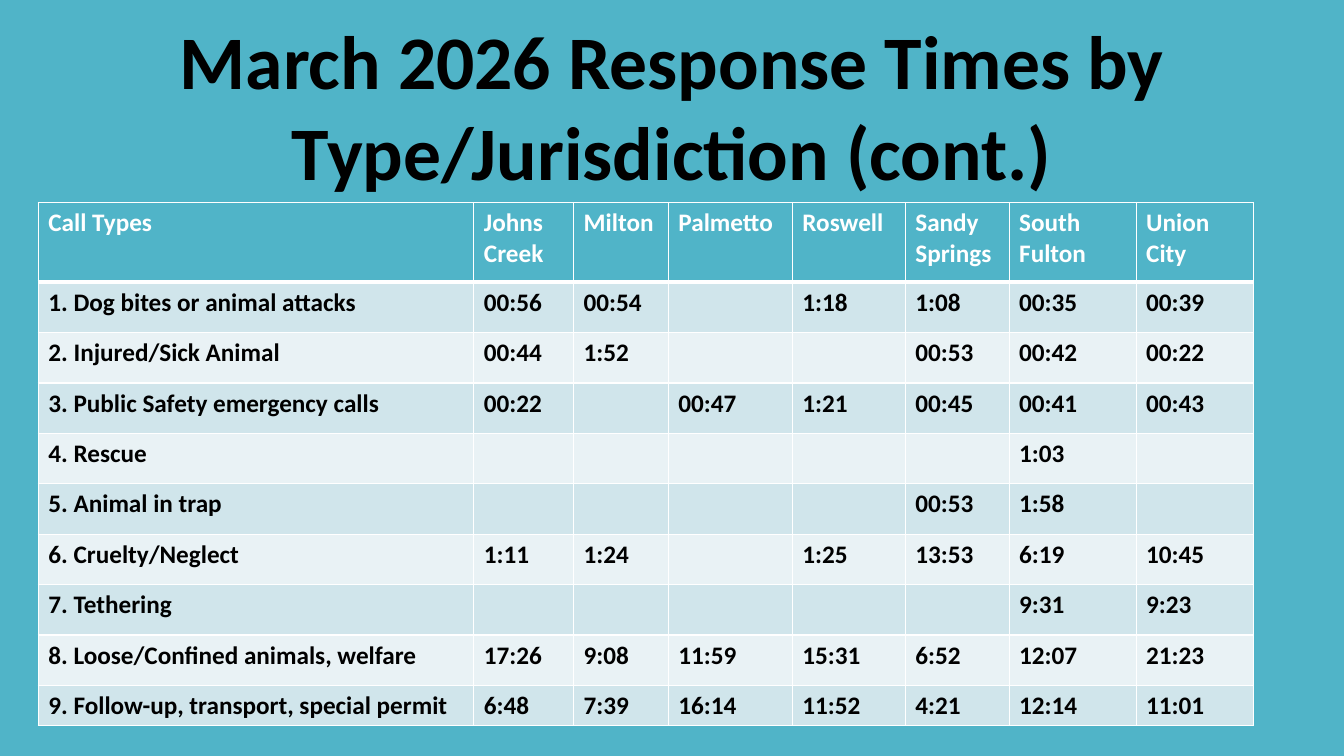
from dataclasses import dataclass

from lxml.etree import SubElement
from pptx import Presentation
from pptx.dml.color import RGBColor
from pptx.enum.text import MSO_ANCHOR, MSO_AUTO_SIZE, PP_ALIGN
from pptx.oxml.ns import qn
from pptx.util import Pt

PX = 9144  # 100 px to the inch


@dataclass(frozen=True)
class Theme:
    font: str = "Calibri"
    teal: str = "50B4C8"
    white: str = "FFFFFF"
    black: str = "000000"
    odd_band: str = "D0E5EB"
    even_band: str = "E9F2F5"
    title_size: int = 54
    cell_size: int = 18
    grid_width: int = 1
    header_rule_width: int = 3


THEME = Theme()

TITLE = "March 2026 Response Times by Type/Jurisdiction (cont.)"
HEADINGS = ["Call Types", "Johns Creek", "Milton", "Palmetto", "Roswell",
            "Sandy Springs", "South Fulton", "Union City"]
RESPONSE_TIMES = [
    ["1. Dog bites or animal attacks", "00:56", "00:54", "", "1:18", "1:08", "00:35", "00:39"],
    ["2. Injured/Sick Animal", "00:44", "1:52", "", "", "00:53", "00:42", "00:22"],
    ["3. Public Safety emergency calls", "00:22", "", "00:47", "1:21", "00:45", "00:41", "00:43"],
    ["4. Rescue", "", "", "", "", "", "1:03", ""],
    ["5. Animal in trap", "", "", "", "", "00:53", "1:58", ""],
    ["6. Cruelty/Neglect", "1:11", "1:24", "", "1:25", "13:53", "6:19", "10:45"],
    ["7. Tethering", "", "", "", "", "", "9:31", "9:23"],
    ["8. Loose/Confined animals, welfare",
     "17:26", "9:08", "11:59", "15:31", "6:52", "12:07", "21:23"],
    ["9. Follow-up, transport, special permit",
     "6:48", "7:39", "16:14", "11:52", "4:21", "12:14", "11:01"],
]
COLUMN_WIDTHS = [432, 99, 94, 123, 112, 103, 126, 116]
ROW_HEIGHTS = [79] + [50] * 8 + [40]


def add_run(paragraph, text, size, color):
    run = paragraph.add_run()
    run.text = text
    run.font.name = THEME.font
    run.font.size = Pt(size)
    run.font.bold = True
    run.font.color.rgb = RGBColor.from_string(color)


def set_borders(cell, bottom_width):
    properties = cell._tc.get_or_add_tcPr()
    widths = {"lnL": THEME.grid_width, "lnR": THEME.grid_width,
              "lnT": THEME.grid_width, "lnB": bottom_width}
    for index, (side, width) in enumerate(widths.items()):
        border = SubElement(properties, qn(f"a:{side}"), w=str(Pt(width)))
        fill = SubElement(border, qn("a:solidFill"))
        SubElement(fill, qn("a:srgbClr"), val=THEME.white)
        properties.insert(index, border)  # borders precede the cell fill


def place_title(slide, left, top, width, height):
    title = slide.shapes.title
    title.left, title.top = left * PX, top * PX
    title.width, title.height = width * PX, height * PX
    frame = title.text_frame
    frame.word_wrap = True
    frame.auto_size = MSO_AUTO_SIZE.SHAPE_TO_FIT_TEXT
    frame.vertical_anchor = MSO_ANCHOR.TOP
    heading = frame.paragraphs[0]
    heading.alignment = PP_ALIGN.CENTER
    add_run(heading, TITLE, THEME.title_size, THEME.black)


def add_response_table(slide, left, top):
    rows = [HEADINGS] + RESPONSE_TIMES
    table = slide.shapes.add_table(
        len(rows), len(HEADINGS), left * PX, top * PX,
        sum(COLUMN_WIDTHS) * PX, sum(ROW_HEIGHTS) * PX).table
    for column, width in zip(table.columns, COLUMN_WIDTHS):
        column.width = width * PX
    for number, (row, height, texts) in enumerate(zip(table.rows, ROW_HEIGHTS, rows)):
        row.height = height * PX
        is_header = number == 0
        band = THEME.odd_band if number % 2 else THEME.even_band
        for cell, text in zip(row.cells, texts):
            cell.fill.solid()
            cell.fill.fore_color.rgb = RGBColor.from_string(THEME.teal if is_header else band)
            set_borders(cell, THEME.header_rule_width if is_header else THEME.grid_width)
            if text:
                add_run(cell.text_frame.paragraphs[0], text, THEME.cell_size,
                        THEME.white if is_header else THEME.black)


def build_response_slide(deck):
    slide = deck.slides.add_slide(deck.slide_layouts[5])
    slide.background.fill.solid()
    slide.background.fill.fore_color.rgb = RGBColor.from_string(THEME.teal)
    place_title(slide, 38, 9, 1257, 192)
    add_response_table(slide, 38, 201)


def main():
    deck = Presentation()
    deck.slide_width, deck.slide_height = 1333 * PX, 750 * PX
    build_response_slide(deck)
    deck.save("out.pptx")


if __name__ == "__main__":
    main()
